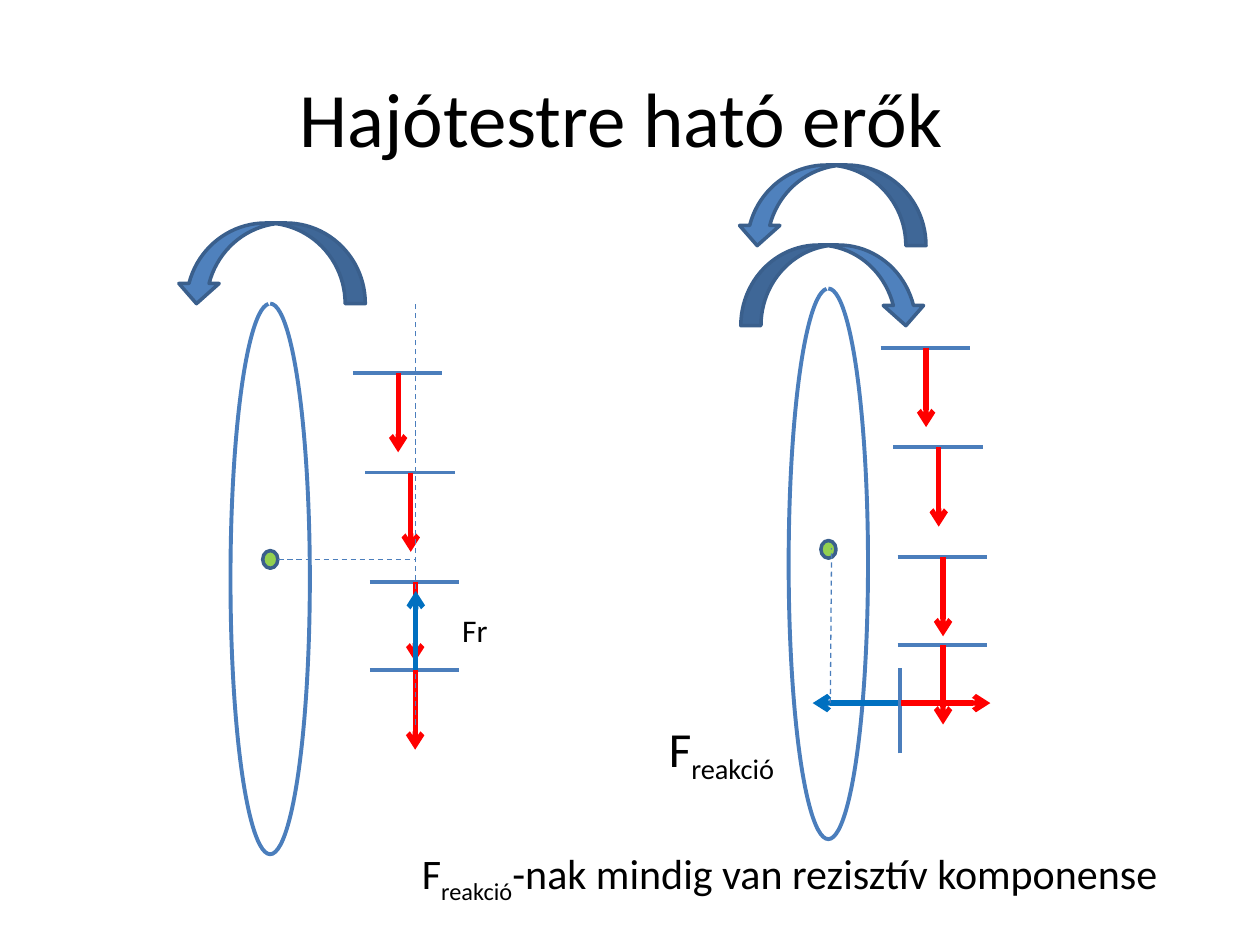
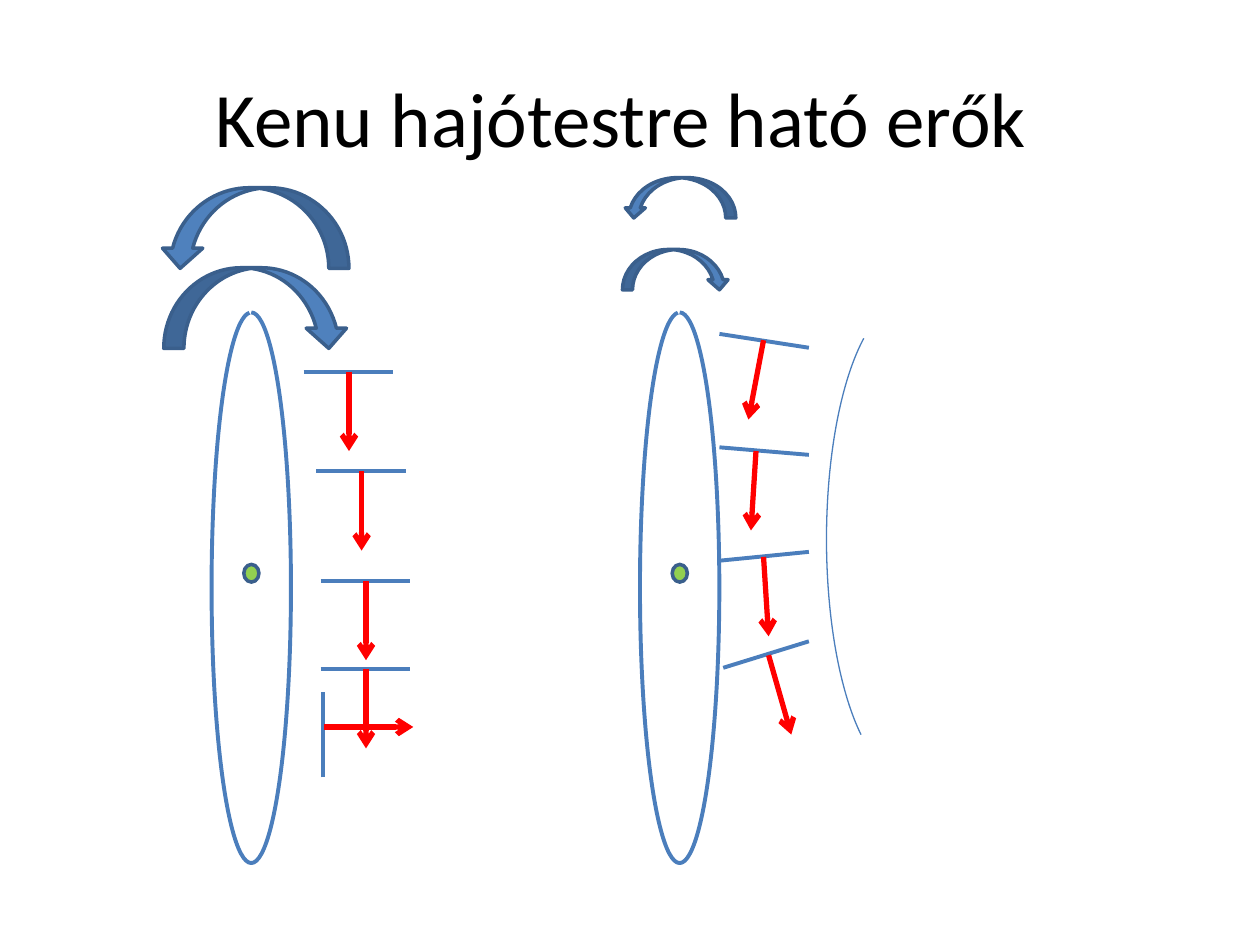
from pptx import Presentation
from pptx.dml.color import RGBColor
from pptx.enum.dml import MSO_LINE_DASH_STYLE as Dash
from pptx.enum.shapes import MSO_CONNECTOR as Conn, MSO_SHAPE as Geo
from pptx.enum.text import MSO_ANCHOR as Anchor, PP_ALIGN as Align
from pptx.oxml.ns import qn
from pptx.util import Inches, Pt
from lxml.etree import SubElement

BLACK = RGBColor(0, 0, 0)
LINE = RGBColor(0x4B, 0x7E, 0xBC)
FILL = RGBColor(0x4F, 0x81, 0xBD)
EDGE = RGBColor(0x3A, 0x5F, 0x8C)
RED = RGBColor(0xFF, 0, 0)
BLUE = RGBColor(0, 0x70, 0xC0)
GREEN = RGBColor(0x92, 0xD0, 0x50)
FONT = "Calibri"

# The grid has 100 columns and 75 rows.
COLS, ROWS = 100, 75
CELL = Inches(10) / COLS

BLADE = 7.1     # length of a paddle blade
PULL = 6.3      # length of a force arrow
MID = 3.6       # from the end of a blade to its arrow
STEPS = [(0, 0), (1, 7.9), (1.35, 16.6), (1.35, 23.6)]


def grid(*cells):
    return [round(c * CELL) for c in cells]


class Deck:
    def __init__(self):
        self.prs = Presentation()
        self.prs.slide_width, self.prs.slide_height = grid(COLS, ROWS)
        self.slide = None

    def page(self, title):
        self.slide = self.prs.slides.add_slide(self.prs.slide_layouts[5])
        box = self.slide.shapes.title
        box.left, box.top, box.width, box.height = grid(5, 3, 90, 12.5)
        box.text_frame.vertical_anchor = Anchor.MIDDLE
        para = box.text_frame.paragraphs[0]
        para.alignment = Align.CENTER
        self.run(para, title, 44)

    def run(self, para, text, size, sub=False):
        run = para.add_run()
        run.text = text
        font = run.font
        font.name, font.size, font.color.rgb = FONT, Pt(size), BLACK
        if sub:
            font._element.set("baseline", "-25000")

    def label(self, x, y, w, h, size, *runs):
        """Add one line of text; each run is (text, is subscript)."""
        frame = self.slide.shapes.add_textbox(*grid(x, y, w, h)).text_frame
        frame.word_wrap = False
        for text, sub in runs:
            self.run(frame.paragraphs[0], text, size, sub)

    def line(self, x1, y1, x2, y2, color=LINE, width=2.25, dash=False, head=False):
        line = self.slide.shapes.add_connector(Conn.STRAIGHT, *grid(x1, y1, x2, y2))
        line.line.color.rgb, line.line.width = color, Pt(width)
        if dash:
            line.line.dash_style = Dash.DASH
        if head:
            SubElement(line.line._get_or_add_ln(), qn("a:tailEnd"), type="arrow")
        SubElement(line._element.spPr, qn("a:effectLst"))

    def force(self, x1, y1, x2, y2, color=RED):
        self.line(x1, y1, x2, y2, color, 3, head=True)

    def guide(self, x1, y1, x2, y2):
        self.line(x1, y1, x2, y2, width=0.75, dash=True)

    def shape(self, kind, x, y, w, h, fill=None, edge=EDGE, width=2, flip=False):
        shape = self.slide.shapes.add_shape(kind, *grid(x, y, w, h))
        shape.shadow.inherit = False
        if fill is None:
            shape.fill.background()
        else:
            shape.fill.solid()
            shape.fill.fore_color.rgb = fill
        shape.line.color.rgb, shape.line.width = edge, Pt(width)
        if flip:
            shape._element.spPr.xfrm.set("flipH", "1")
        return shape

    def arc(self, x, y, w, h, start, end, width=2.25, flip=False):
        """Add an arc; start and end are in degrees, clockwise from the right."""
        arc = self.shape(Geo.ARC, x, y, w, h, None, LINE, width, flip)
        for i, angle in enumerate((start, end)):
            arc.adjustments[i] = angle * 0.6

    def hull(self, x, y, drop=20):
        """Add a boat with its pivot, which lies drop rows below the bow."""
        self.arc(x, y, 6.3, 43.7, 270, 269.63)
        self.shape(Geo.OVAL, x + 2.55, y + drop, 1.2, 1.4, GREEN)

    def turn(self, x, y, w=15, h=6.4, flip=False):
        self.shape(Geo.CURVED_DOWN_ARROW, x, y, w, h, FILL, flip=flip)

    def turns(self, x, y):
        """Add two opposed turning arrows, one above the other."""
        self.turn(x, y, flip=True)
        self.turn(x + 0.3, y + 6.35, 14.7)

    def strokes(self, x, y):
        """Add four straight paddle strokes down the side of the boat."""
        for dx, dy in STEPS:
            left, top = x + dx, y + dy
            self.line(left, top, left + BLADE, top)
            self.force(left + MID, top, left + MID, top + PULL)

    def draw(self, x, y):
        """Add the sideways stroke that belongs to the strokes at x, y."""
        self.line(x + 1.5, y + 32.2, x + 1.5, y + 25.4)
        self.force(x + 1.6, y + 28.2, x + 8.7, y + 28.2)


def forces(deck):
    deck.page("Hajótestre ható erők ")
    deck.hull(18.3, 24.1, 19.6)
    deck.turn(14, 17.7, flip=True)
    deck.strokes(28, 29.6)
    deck.guide(33, 57.5, 33, 24.1)
    deck.guide(22.1, 44.4, 33, 44.4)
    deck.force(33, 53.2, 33, 46.9, BLUE)
    deck.label(35.7, 48, 4.1, 4, 18, ("Fr", False))

    deck.hull(62.6, 22.9)
    deck.turns(58.5, 13.1)
    deck.strokes(69.9, 27.6)
    deck.draw(69.9, 27.6)
    deck.force(71.3, 55.8, 64.5, 55.8, BLUE)
    deck.guide(65.9, 55.8, 66, 43.5)
    sign = ("F", False), ("reakció", True)
    deck.label(52.1, 56.5, 11.5, 5.7, 28, *sign)
    deck.label(32.5, 66.8, 61.8, 5, 24, *sign,
               ("-nak mindig van rezisztív komponense", False))


def canoe(deck):
    deck.page("Kenu hajótestre ható erők ")
    deck.hull(16.8, 24.8)
    deck.turns(12.7, 14.9)
    deck.strokes(24.1, 29.5)
    deck.draw(24.1, 29.5)

    deck.hull(50.8, 24.8)
    deck.turn(49.5, 14.1, 8.9, 3.2, flip=True)
    deck.turn(49.4, 19.8, 8.5, 3.2)
    # Each tilted stroke: blade left, its two heights, arrow start and shift.
    tilted = [(57.1, 26.5, 27.6, 60.6, 27, -1.2),
              (57.1, 35.5, 36.1, 60, 35.8, -0.4),
              (57.1, 44.5, 43.8, 60.6, 44.2, 0.4),
              (57.4, 53, 50.9, 61, 52, 1.8)]
    for left, y1, y2, x, y, shift in tilted:
        deck.line(left, y1, 64.2, y2)
        deck.force(x, y, x + shift, y + PULL)
    deck.arc(65.6, 24, 12.6, 37.6, 281.84, 77.08, 0.75, flip=True)


def main():
    deck = Deck()
    forces(deck)
    canoe(deck)
    deck.prs.save("out.pptx")


if __name__ == "__main__":
    main()
